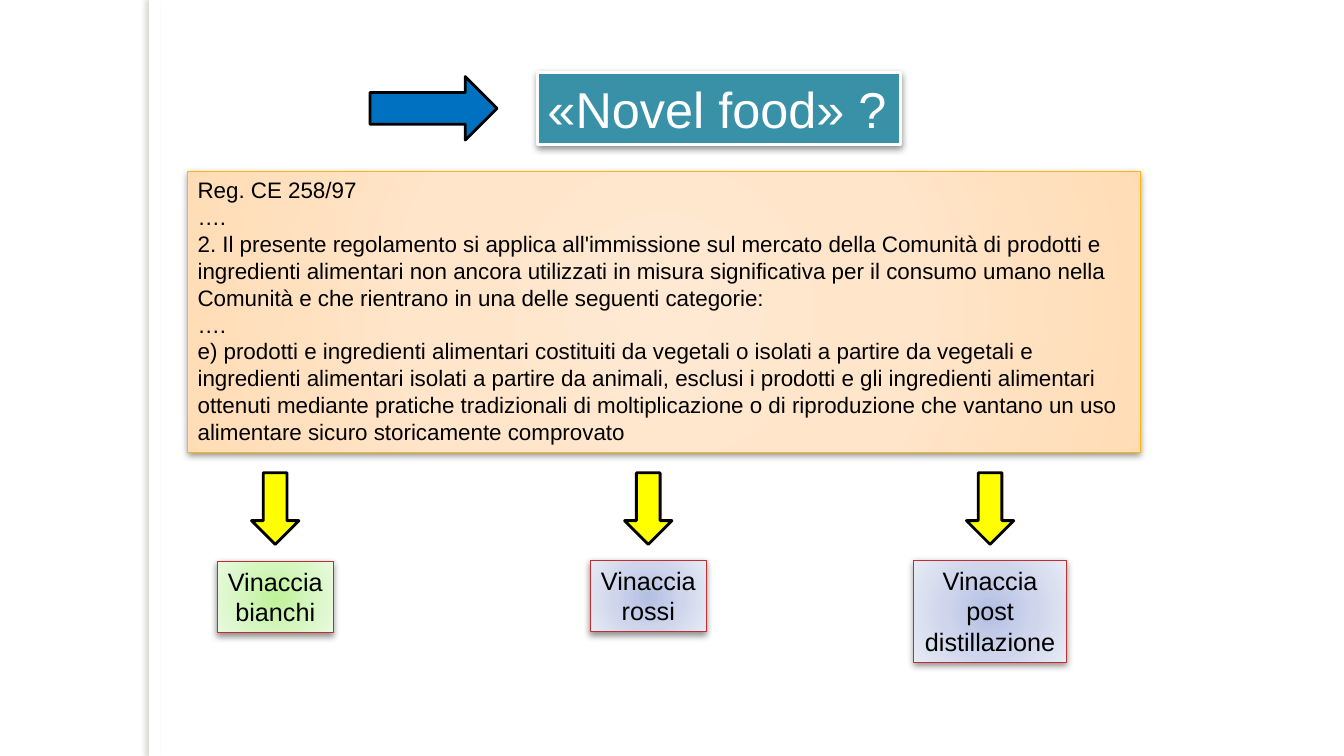
from pptx import Presentation
from pptx.dml.color import RGBColor
from pptx.enum.shapes import MSO_SHAPE
from pptx.enum.text import MSO_ANCHOR, MSO_AUTO_SIZE, PP_ALIGN
from pptx.oxml import parse_xml
from pptx.oxml.ns import nsdecls
from pptx.util import Inches, Pt

# Content
TITLE = "«Novel food» ?"
RULES = [
    "Reg. CE 258/97",
    "….",
    "2. Il presente regolamento si applica all'immissione sul mercato della Comunità di prodotti e",
    "ingredienti alimentari non ancora utilizzati in misura significativa per il consumo umano nella",
    "Comunità e che rientrano in una delle seguenti categorie:",
    "….",
    "e) prodotti e ingredienti alimentari costituiti da vegetali o isolati a partire da vegetali e "
    "ingredienti alimentari isolati a partire da animali, esclusi i prodotti e gli ingredienti "
    "alimentari ottenuti mediante pratiche tradizionali di moltiplicazione o di riproduzione che "
    "vantano un uso alimentare sicuro storicamente comprovato",
]
# Lines, centre, top, width, height, gradient
POMACE = [
    (["Vinaccia", "bianchi"], 2.73, 5.57, 1.15, 0.71, "green"),
    (["Vinaccia", "rossi"], 6.43, 5.56, 1.15, 0.71, "blue"),
    (["Vinaccia", "post", "distillazione"], 9.82, 5.56, 1.51, 1.01, "blue"),
]

# Look
COLORS = {
    "white": "FFFFFF", "black": "000000", "teal": "3891A7", "arrow": "0070C0",
    "yellow": "FFFF00", "gold": "FEB80A", "red": "C32D2E", "shade": "736F63",
}
GRADS = {
    "peach": [(0, "FFE9D3"), (50, "FFE5C9"), (97, "FFDDB7"), (100, "FFDBB2")],
    "green": [(0, "BEF297"), (50, "D5F6C0"), (100, "EAFAE0")],
    "blue": [(0, "B3BFE3"), (50, "CFD6EC"), (100, "E7EBF5")],
}
DROP = ("black", 43, 5, 2, 90)
SIDE = ("shade", 25, 3, 3, 180)
FRAME = {
    "auto_size": MSO_AUTO_SIZE.NONE, "vertical_anchor": MSO_ANCHOR.TOP,
    "margin_left": Inches(0.1), "margin_right": Inches(0.1),
    "margin_top": Inches(0.05), "margin_bottom": Inches(0.05),
}
PARA = {"space_before": Pt(0), "space_after": Pt(0), "line_spacing": 1.0}
ARROW = (0.47, 0.71)
ARROW_TOP = 4.69


def rgb(name):
    return RGBColor.from_string(COLORS[name])


def apply(item, values):
    for key, value in values.items():
        setattr(item, key, value)


def place(shape, box):
    names = ("left", "top", "width", "height")
    apply(shape, dict(zip(names, map(Inches, box))))


def paint(shape, fill, line=None, width=0.75, shadow=None):
    props = shape._element.spPr
    if fill in GRADS:
        stops = "".join(
            f'<a:gs pos="{pos * 1000}"><a:srgbClr val="{tone}"/></a:gs>'
            for pos, tone in GRADS[fill])
        props.append(parse_xml(
            f'<a:gradFill {nsdecls("a")} rotWithShape="1"><a:gsLst>{stops}</a:gsLst>'
            '<a:path path="circle"><a:fillToRect l="50000" t="50000" r="50000" b="50000"/>'
            '</a:path></a:gradFill>'))
    else:
        shape.fill.solid()
        shape.fill.fore_color.rgb = rgb(fill)
    if line:
        shape.line.color.rgb = rgb(line)
        shape.line.width = Pt(width)
    else:
        shape.line.fill.background()
    shape.shadow.inherit = False
    if shadow:
        tone, alpha, blur, dist, angle = shadow
        props[-1].append(parse_xml(
            f'<a:outerShdw {nsdecls("a")} blurRad="{Pt(blur)}" dist="{Pt(dist)}" '
            f'dir="{angle * 60000}" algn="ctr" rotWithShape="0">'
            f'<a:srgbClr val="{COLORS[tone]}"><a:alpha val="{alpha * 1000}"/>'
            '</a:srgbClr></a:outerShdw>'))


def write(shape, lines, size, color="black", align=PP_ALIGN.LEFT, wrap=False):
    frame = shape.text_frame
    frame.text = "\n".join(lines)
    apply(frame, {**FRAME, "word_wrap": wrap})
    for para in frame.paragraphs:
        apply(para, {**PARA, "alignment": align})
        for run in para.runs:
            apply(run.font, {"name": "Arial", "size": Pt(size)})
            run.font.color.rgb = rgb(color)


def add(slide, kind, box, *look, **more):
    shape = slide.shapes.add_shape(kind, *map(Inches, box))
    paint(shape, *look, **more)
    return shape


def main():
    deck = Presentation()
    apply(deck, {"slide_width": Inches(13.33), "slide_height": Inches(7.5)})
    slide = deck.slides.add_slide(deck.slide_layouts[1])

    # Side strip and title
    add(slide, MSO_SHAPE.RECTANGLE, (1.48, 0, 0.11, 7.5), "white", shadow=SIDE)
    add(slide, MSO_SHAPE.RIGHT_ARROW, (3.67, 0.76, 1.26, 0.63), "arrow", "black", 2)
    title = slide.shapes.title
    place(title, (5.33, 0.72, 3.6, 0.71))
    paint(title, "teal", "white", 2, DROP)
    write(title, [TITLE], 36, "white")

    # Regulation text, without bullets
    body = slide.placeholders[1]
    place(body, (1.86, 1.7, 9.45, 2.79))
    paint(body, "peach", "gold", shadow=DROP)
    write(body, RULES, 16, wrap=True)
    for para in body.text_frame.paragraphs:
        props = para._p.get_or_add_pPr()
        for key in ("marL", "indent"):
            props.set(key, "0")
        props.append(parse_xml(f'<a:buNone {nsdecls("a")}/>'))

    # Arrows down to each kind of pomace
    wide, high = ARROW
    for lines, mid, top, width, height, fill in POMACE:
        add(slide, MSO_SHAPE.DOWN_ARROW, (mid - wide / 2, ARROW_TOP, wide, high),
            "yellow", "black", 2)
        label = add(slide, MSO_SHAPE.RECTANGLE, (mid - width / 2, top, width, height),
                    fill, "red", shadow=DROP)
        write(label, lines, 18, align=PP_ALIGN.CENTER)

    deck.save("out.pptx")


if __name__ == "__main__":
    main()
